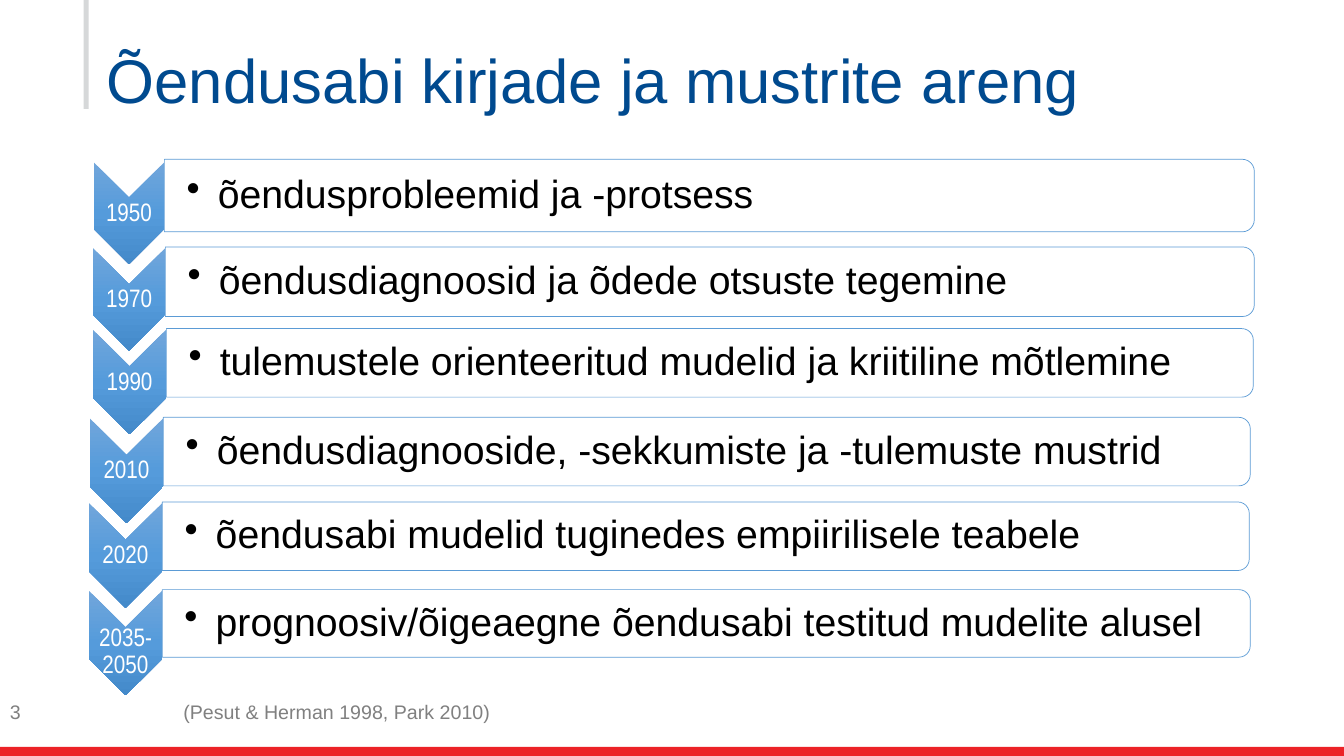
from dataclasses import dataclass

import pptx
import pptx.dml.color
import pptx.enum.dml
import pptx.enum.shapes
import pptx.enum.text
import pptx.oxml
import pptx.oxml.ns
import pptx.util
from lxml import etree

Inches = pptx.util.Inches
RGBColor = pptx.dml.color.RGBColor
Preset = pptx.enum.shapes.MSO_SHAPE
Anchor = pptx.enum.text.MSO_ANCHOR
Align = pptx.enum.text.PP_ALIGN
qn = pptx.oxml.ns.qn

RED = RGBColor(0xEC, 0x22, 0x27)
LIGHT_GREY = RGBColor(0xD6, 0xD8, 0xD9)
GREY = RGBColor(0x80, 0x80, 0x80)
TITLE_BLUE = RGBColor(0x00, 0x4A, 0x8F)
LINE_BLUE = RGBColor(0x5B, 0x9B, 0xD5)
WHITE = RGBColor(0xFF, 0xFF, 0xFF)
BLACK = RGBColor(0x00, 0x00, 0x00)
GRADIENT = (
    (0, RGBColor(0x71, 0xA6, 0xDB)),
    (50, RGBColor(0x55, 0x9B, 0xDB)),
    (100, RGBColor(0x44, 0x8A, 0xCA)),
)


@dataclass
class Stage:
    year: str
    text: str
    left: float
    top: float
    breadth: float
    length: float
    bar_top: float
    bar_width: float
    bar_height: float
    year_inset: float = 0.01


STAGES = [
    Stage("1950", "õendusprobleemid ja -protsess",
          0.93, 1.61, 0.7, 1.01, 1.58, 10.81, 0.72),
    Stage("1970", "õendusdiagnoosid ja õdede otsuste tegemine",
          0.92, 2.46, 0.72, 1.02, 2.45, 10.8, 0.69),
    Stage("1990", "tulemustele orienteeritud mudelid ja kriitiline mõtlemine",
          0.92, 3.27, 0.73, 1.04, 3.26, 10.78, 0.68),
    Stage("2010", "õendusdiagnooside, -sekkumiste ja -tulemuste mustrid",
          0.89, 4.15, 0.73, 1.04, 4.14, 10.78, 0.68),
    Stage("2020", "õendusabi mudelid tuginedes empiirilisele teabele",
          0.88, 4.99, 0.73, 1.04, 4.98, 10.78, 0.68),
    Stage("2035-2050", "prognoosiv/õigeaegne õendusabi testitud mudelite alusel",
          0.88, 5.86, 0.73, 1.04, 5.85, 10.79, 0.67, 0.18),
]


def write_text(box, text: str, *, size: float, color: RGBColor,
               font: str = "Arial", align=Align.LEFT, anchor=Anchor.MIDDLE,
               insets: tuple = (0.1, 0.05, 0.1, 0.05), line_spacing: float = 0.9,
               indent: float = 0, bullet: tuple | None = None) -> None:
    frame = box.text_frame
    frame.word_wrap = True
    frame.auto_size = pptx.enum.text.MSO_AUTO_SIZE.NONE
    frame.vertical_anchor = anchor
    (frame.margin_left, frame.margin_top,
     frame.margin_right, frame.margin_bottom) = map(Inches, insets)
    para = frame.paragraphs[0]
    para.alignment = align
    para.line_spacing = line_spacing
    if bullet:
        tag, attributes = bullet
        properties = para._p.get_or_add_pPr()
        properties.set("marL", str(Inches(indent)))
        properties.set("indent", str(-Inches(indent)))
        etree.SubElement(properties, qn(tag), attributes)
    span = para.add_run()
    span.text = text
    span.font.name = font
    span.font.size = pptx.util.Pt(size)
    span.font.color.rgb = color


def add_textbox(shapes, left: float, top: float, width: float, height: float,
                text: str, **text_format) -> None:
    box = shapes.add_textbox(Inches(left), Inches(top), Inches(width), Inches(height))
    write_text(box, text, **text_format)


def add_plain_shape(shapes, preset, left: float, top: float, width: float,
                    height: float, fill: RGBColor):
    shape = shapes.add_shape(preset, Inches(left), Inches(top),
                             Inches(width), Inches(height))
    shape.shadow.inherit = False
    shape.fill.solid()
    shape.fill.fore_color.rgb = fill
    shape.line.fill.background()
    return shape


def add_quarter_turned(shapes, preset, left: float, top: float, width: float,
                       height: float, fill: RGBColor):
    shift = (width - height) / 2
    shape = add_plain_shape(shapes, preset, left + shift, top - shift,
                            height, width, fill)
    shape.rotation = 90
    return shape


def fill_downward_gradient(shape) -> None:
    shape.fill.gradient()
    gradient = shape._element.spPr.find(qn("a:gradFill"))
    gradient.set("rotWithShape", "0")
    stops = gradient.find(qn("a:gsLst"))
    for stop in list(stops):
        stops.remove(stop)
    for position, color in GRADIENT:
        stop = etree.SubElement(stops, qn("a:gs"), pos=str(position * 1000))
        etree.SubElement(stop, qn("a:srgbClr"), val=str(color))
    direction = gradient.find(qn("a:lin"))
    direction.set("ang", "5400000")
    direction.set("scaled", "0")


def add_stage(page, stage: Stage) -> None:
    shapes = page.shapes.add_group_shape().shapes
    chevron = add_quarter_turned(shapes, Preset.CHEVRON, stage.left, stage.top,
                                 stage.breadth, stage.length, LINE_BLUE)
    fill_downward_gradient(chevron)
    add_textbox(shapes, stage.left, stage.top + stage.length / 2 - 0.15,
                stage.breadth, 0.3, stage.year, size=18, color=WHITE,
                font="Arial Narrow", align=Align.CENTER,
                insets=(0.01, stage.year_inset, 0.01, 0.01))

    bar_left = stage.left + stage.breadth
    bar = add_quarter_turned(shapes, Preset.ROUND_2_SAME_RECTANGLE, bar_left,
                             stage.bar_top, stage.bar_width, stage.bar_height, WHITE)
    fill_color = bar._element.spPr.find(qn("a:solidFill"))[0]
    etree.SubElement(fill_color, qn("a:alpha"), val="90000")
    bar.line.color.rgb = LINE_BLUE
    bar.line.width = pptx.util.Pt(0.5)
    add_textbox(shapes, bar_left, stage.bar_top + 0.03, stage.bar_width - 0.03,
                stage.bar_height - 0.06, stage.text, size=28, color=BLACK,
                insets=(0.22, 0.02, 0.02, 0.02), indent=0.31,
                bullet=("a:buChar", {"char": "•"}))


def main() -> None:
    deck = pptx.Presentation()
    deck.slide_width = Inches(13.33)
    deck.slide_height = Inches(7.5)
    page = deck.slides.add_slide(deck.slide_layouts[5])

    add_plain_shape(page.shapes, Preset.RECTANGLE, 0, 7.41, 13.33, 0.09, RED)
    add_plain_shape(page.shapes, Preset.RECTANGLE, 0.83, 0, 0.05, 1.08, LIGHT_GREY)

    title = page.shapes.title
    title.left, title.top = Inches(0.96), Inches(0.42)
    title.width, title.height = Inches(11.5), Inches(1.01)
    write_text(title, "Õendusabi kirjade ja mustrite areng", size=44,
               color=TITLE_BLUE, anchor=Anchor.TOP, insets=(0.1, 0.08, 0.1, 0.05))

    add_textbox(page.shapes, 0, 6.89, 11.81, 0.4,
                "(Pesut & Herman 1998, Park 2010)", size=14, color=GREY,
                anchor=Anchor.TOP, line_spacing=1.0, indent=1.72,
                bullet=("a:buAutoNum", {"type": "arabicPlain", "startAt": "3"}))

    for stage in STAGES:
        add_stage(page, stage)

    deck.save("out.pptx")


if __name__ == "__main__":
    main()
